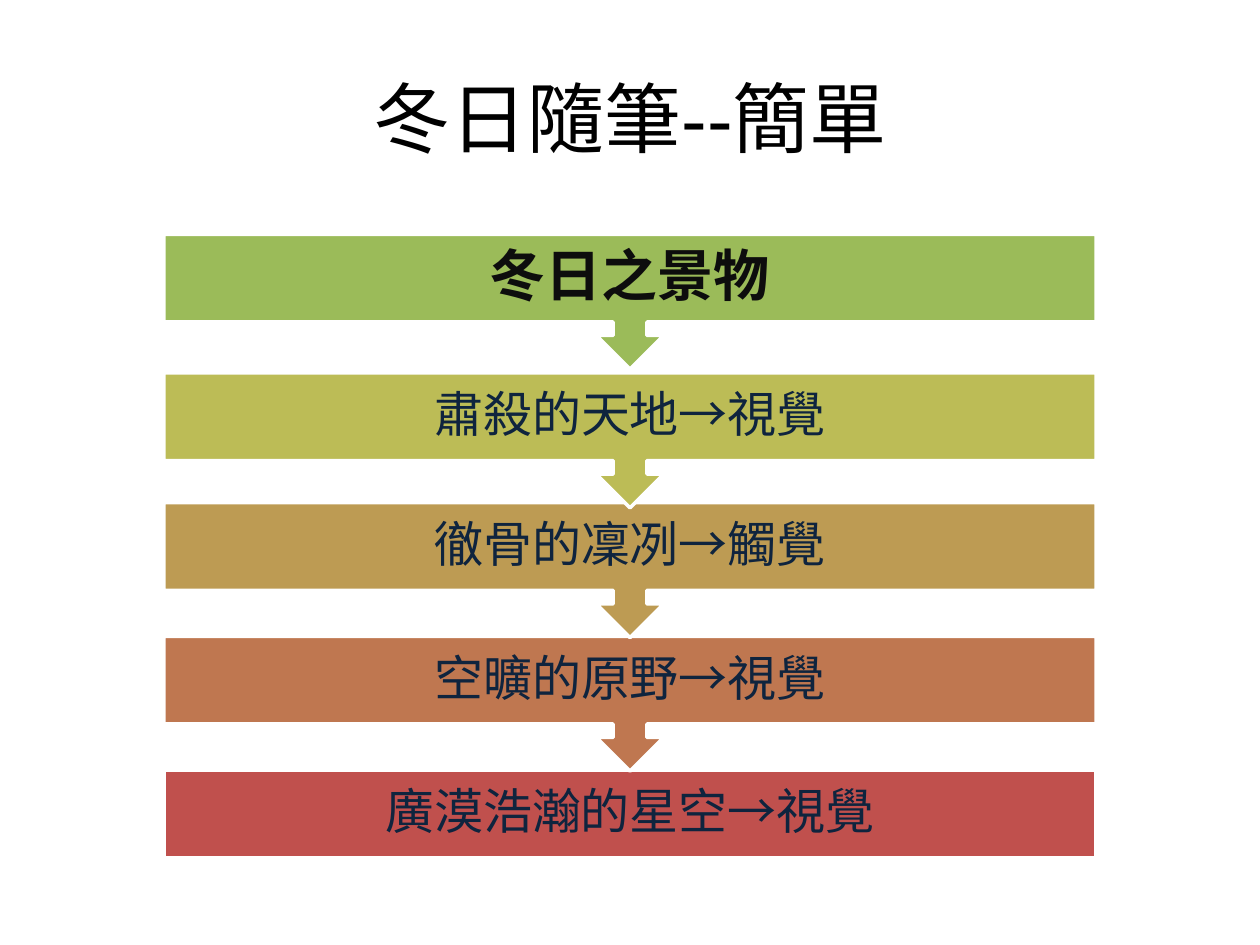
"""Build a slide with a title and five steps that lead downwards."""
from typing import NamedTuple

from pptx import Presentation
from pptx.dml.color import RGBColor
from pptx.enum import shapes, text
from pptx.util import Inches, Pt

COLS, ROWS = 100, 75
CELL = Inches(0.1)
LEFT, WIDE = 13, 74
BAR, CALL = 7, 10.7

BLACK = RGBColor(0x00, 0x00, 0x00)
WHITE = RGBColor(0xFF, 0xFF, 0xFF)
INK = RGBColor(0x0D, 0x0D, 0x0D)
NAVY = RGBColor(0x0F, 0x24, 0x3E)
GREEN = RGBColor(0x9B, 0xBB, 0x59)
LIME = RGBColor(0xBC, 0xBC, 0x56)
SAND = RGBColor(0xBD, 0x9B, 0x53)
RUST = RGBColor(0xBF, 0x77, 0x50)
RED = RGBColor(0xC0, 0x50, 0x4D)


class Style(NamedTuple):
    size: int
    font: str
    ink: RGBColor
    bold: bool = False
    inset: float = 2.2
    lead: float = 0.9


class Step(NamedTuple):
    row: float
    words: str
    fill: RGBColor
    style: Style
    arrow: bool = True


TITLE = Style(44, "Arial", BLACK, inset=0.5, lead=1.0)
HEAD = Style(32, "Noto Sans CJK SC", INK, bold=True, inset=2.5)
NOTO = Style(28, "Noto Sans CJK SC", NAVY)
BODY = Style(28, "Calibri", NAVY)

STEPS = [
    Step(18.6, "冬日之景物", GREEN, HEAD),
    Step(29.6, "肅殺的天地→視覺", LIME, NOTO),
    Step(39.9, "徹骨的凜冽→觸覺", SAND, BODY),
    Step(50.5, "空曠的原野→視覺", RUST, BODY),
    Step(61.1, "廣漠浩瀚的星空→視覺", RED, BODY, arrow=False),
]


def grid(*cells: float) -> list[int]:
    """Turn counts of grid cells into lengths."""
    return [round(n * CELL) for n in cells]


def write(slide, words: str, box: tuple, style: Style) -> None:
    """Put one centred line of text in a box of grid cells."""
    frame = slide.shapes.add_textbox(*grid(*box)).text_frame
    frame.word_wrap = True
    frame.vertical_anchor = text.MSO_ANCHOR.MIDDLE
    pad = grid(style.inset)[0]
    frame.margin_left = frame.margin_right = pad
    frame.margin_top = frame.margin_bottom = pad
    para = frame.paragraphs[0]
    para.text = words
    para.alignment = text.PP_ALIGN.CENTER
    para.line_spacing = style.lead
    para.font.size = Pt(style.size)
    para.font.name = style.font
    para.font.bold = style.bold
    para.font.color.rgb = style.ink


def draw(slide, step: Step) -> None:
    """Draw a bar, with an arrow below it if the step has one, and its words."""
    kind = shapes.MSO_SHAPE
    form = kind.UP_ARROW_CALLOUT if step.arrow else kind.RECTANGLE
    tall = CALL if step.arrow else BAR
    bar = slide.shapes.add_shape(form, *grid(LEFT, step.row, WIDE, tall))
    bar.rotation = 180 if step.arrow else 0
    bar.shadow.inherit = False
    bar.fill.solid()
    bar.fill.fore_color.rgb = step.fill
    bar.line.color.rgb = WHITE
    bar.line.width = Pt(2)
    write(slide, step.words, (LEFT, step.row, WIDE, BAR), step.style)


def main() -> None:
    """Build and save the slide."""
    deck = Presentation()
    deck.slide_width, deck.slide_height = grid(COLS, ROWS)
    slide = deck.slides.add_slide(deck.slide_layouts[6])
    write(slide, "冬日隨筆--簡單", (5, 3, 90, 12.5), TITLE)
    for step in reversed(STEPS):
        draw(slide, step)
    deck.save("out.pptx")


if __name__ == "__main__":
    main()
